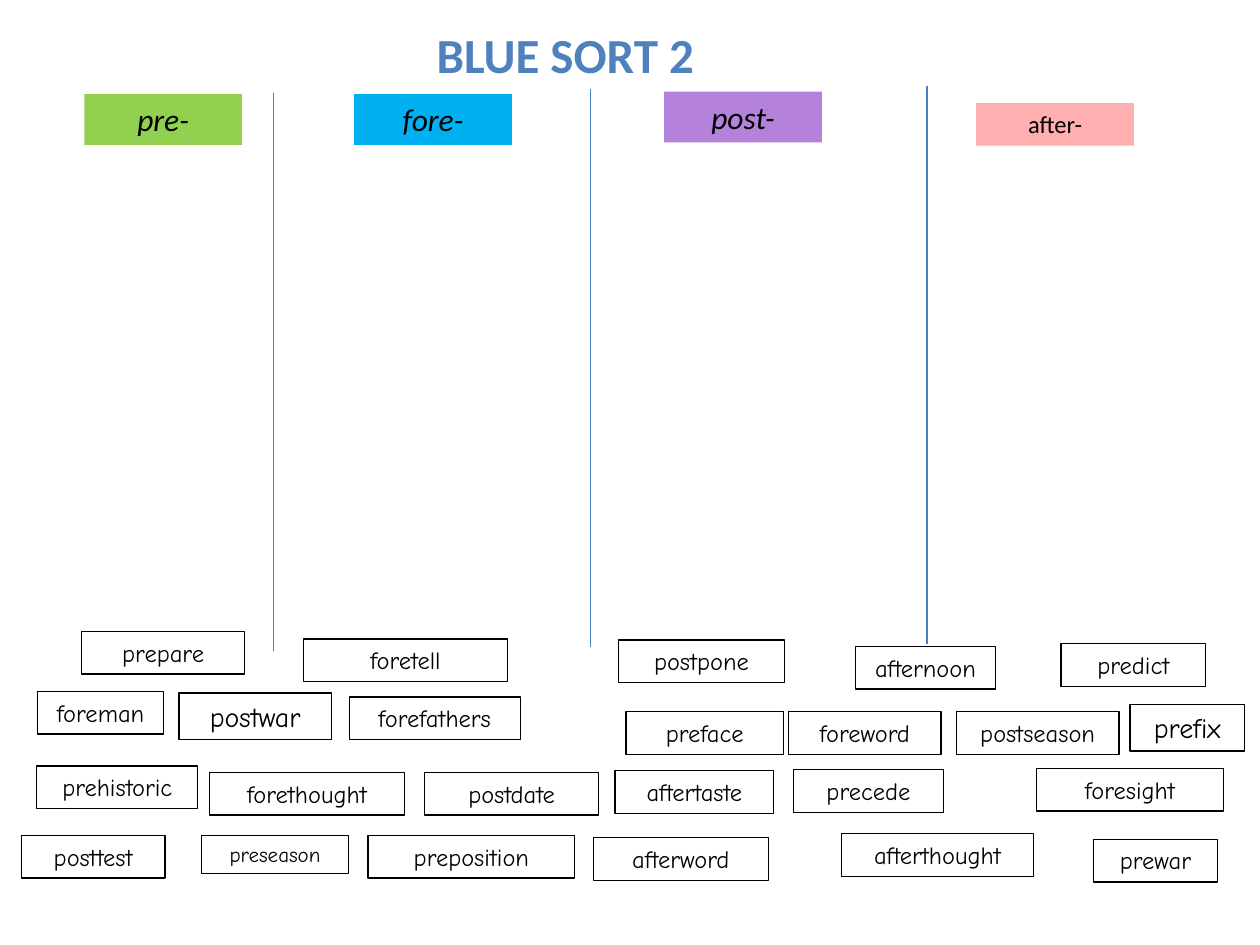
from lxml import etree
from pptx import Presentation
from pptx.dml.color import RGBColor
from pptx.enum.shapes import MSO_CONNECTOR, MSO_SHAPE
from pptx.enum.text import MSO_ANCHOR, MSO_AUTO_SIZE, PP_ALIGN
from pptx.oxml.ns import qn
from pptx.util import Cm, Pt

RECTANGLE = MSO_SHAPE.RECTANGLE
STRAIGHT = MSO_CONNECTOR.STRAIGHT
CENTER = PP_ALIGN.CENTER
TOP = MSO_ANCHOR.TOP
FIT_SHAPE = MSO_AUTO_SIZE.SHAPE_TO_FIT_TEXT

HEADING_FONT, WORD_FONT = "Calibri", "Comic Neue"
COLORS = {
    "title": "4F81BD", "divider": "4B7EBC", "text": "000000",
    "pre": "92D050", "fore": "00B0F0", "post": "B482DA", "after": "FFAFAF",
}
# Box height in cm for each text size in points
HEIGHTS = {12: 0.77, 14: 0.86, 16: 0.94, 18: 1.02}
HEADING_WIDTH = 3.18
DIVIDER_LENGTH = 11.25

# Prefix, left, top, text size, italic
HEADINGS = [
    ("pre", 1.7, 1.9, 18, True),
    ("fore", 7.14, 1.9, 18, True),
    ("post", 13.39, 1.85, 18, True),
    ("after", 19.68, 2.08, 14, False),
]
# Left, top
DIVIDERS = [(5.51, 1.88), (11.91, 1.8), (18.69, 1.73)]
# Word, left, top, width, and the text size where it is not 14
WORDS = [
    ("prepare", 1.65, 12.73, 3.28),
    ("foretell", 6.12, 12.88, 4.11),
    ("postpone", 12.47, 12.9, 3.35),
    ("afternoon", 17.25, 13.03, 2.82),
    ("predict", 21.39, 12.98, 2.92),
    ("foreman", 0.76, 13.94, 2.54),
    ("postwar", 3.61, 13.97, 3.07, 16),
    ("forefathers", 7.04, 14.05, 3.45),
    ("preface", 12.62, 14.35, 3.18),
    ("foreword", 15.9, 14.35, 3.07),
    ("postseason", 19.28, 14.35, 3.28),
    ("prefix", 22.78, 14.2, 2.31, 16),
    ("prehistoric", 0.74, 15.44, 3.25),
    ("forethought", 4.22, 15.57, 3.94),
    ("postdate", 8.56, 15.57, 3.51),
    ("aftertaste", 12.4, 15.54, 3.2),
    ("precede", 16, 15.52, 3.02),
    ("foresight", 20.9, 15.49, 3.76),
    ("posttest", 0.43, 16.84, 2.9),
    ("preseason", 4.06, 16.84, 2.97, 12),
    ("preposition", 7.42, 16.84, 4.17),
    ("afterword", 11.96, 16.89, 3.53),
    ("afterthought", 16.97, 16.81, 3.86),
    ("prewar", 22.05, 16.92, 2.49),
]


def rgb(name):
    return RGBColor.from_string(COLORS[name])


class SortPage:
    """Draws the parts of a word sort on one slide."""

    def __init__(self, page):
        self.page = page

    def set_text(self, box, text, font, size, color="text", bold=False, italic=False):
        frame = box.text_frame
        frame.text = text
        frame.word_wrap = True
        frame.auto_size = FIT_SHAPE
        frame.vertical_anchor = TOP
        para = frame.paragraphs[0]
        para.alignment = CENTER
        para.font.name = font
        para.font.size = Pt(size)
        para.font.bold = bold
        para.font.italic = italic
        para.font.color.rgb = rgb(color)

    def title(self, text, left, top, width, height):
        box = self.page.shapes.title
        box.left, box.top = Cm(left), Cm(top)
        box.width, box.height = Cm(width), Cm(height)
        self.set_text(box, text, HEADING_FONT, 28, "title", bold=True)

    def rectangle(self, left, top, width, size):
        box = self.page.shapes.add_shape(
            RECTANGLE, Cm(left), Cm(top), Cm(width), Cm(HEIGHTS[size]))
        box.shadow.inherit = False
        return box

    def heading(self, prefix, left, top, size, italic):
        box = self.rectangle(left, top, HEADING_WIDTH, size)
        box.fill.solid()
        box.fill.fore_color.rgb = rgb(prefix)
        box.line.fill.background()
        self.set_text(box, prefix + "-", HEADING_FONT, size, italic=italic)

    def word(self, text, left, top, width, size=14):
        box = self.rectangle(left, top, width, size)
        box.fill.background()
        box.line.color.rgb = rgb("text")
        box.line.width = Pt(0.75)
        self.set_text(box, text, WORD_FONT, size)

    def divider(self, left, top):
        line = self.page.shapes.add_connector(
            STRAIGHT, Cm(left), Cm(top), Cm(left), Cm(top + DIVIDER_LENGTH))
        line.line.color.rgb = rgb("divider")
        line.line.width = Pt(0.75)
        etree.SubElement(line._element.spPr, qn("a:effectLst"))


def main():
    deck = Presentation()
    deck.slide_width, deck.slide_height = Cm(25.4), Cm(19.05)
    sort = SortPage(deck.slides.add_slide(deck.slide_layouts[5]))

    # Title and column headings
    sort.title("BLUE SORT 2", 5.54, 0.36, 11.71, 1.45)
    for heading in HEADINGS:
        sort.heading(*heading)

    # Lines between the columns
    for divider in DIVIDERS:
        sort.divider(*divider)

    # Words to sort
    for word in WORDS:
        sort.word(*word)

    deck.save("out.pptx")


if __name__ == "__main__":
    main()
